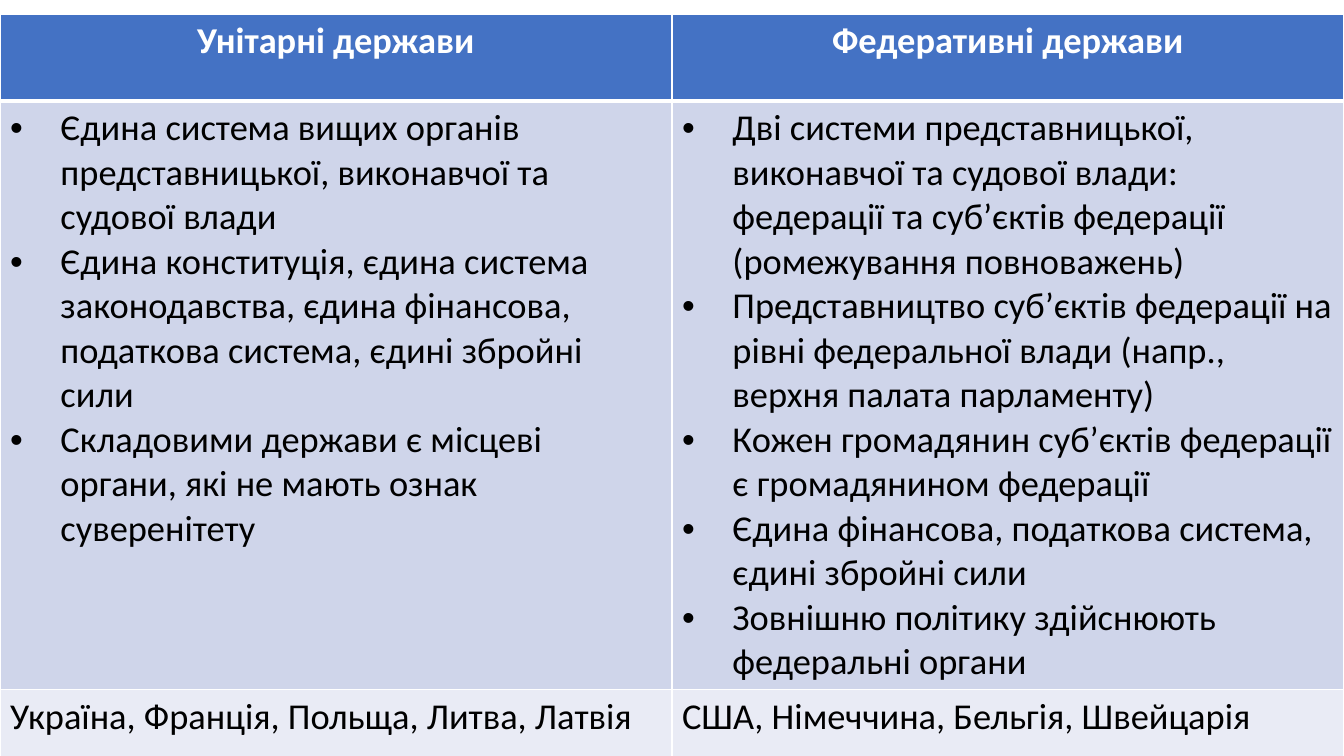
from lxml.etree import SubElement
from pptx import Presentation
from pptx.dml.color import RGBColor
from pptx.enum.text import PP_ALIGN
from pptx.oxml.ns import qn
from pptx.util import Inches, Pt

HEADINGS = ["Унітарні держави", "Федеративні держави"]
FEATURES = [
    [
        "Єдина система вищих органів представницької, виконавчої та судової влади",
        "Єдина конституція, єдина система законодавства, єдина фінансова, "
        "податкова система, єдині збройні сили",
        "Складовими держави є місцеві органи, які не мають ознак суверенітету",
    ],
    [
        "Дві системи представницької, виконавчої та судової влади: федерації "
        "та суб’єктів федерації (ромежування повноважень)",
        "Представництво суб’єктів федерації на рівні федеральної влади "
        "(напр., верхня палата парламенту)",
        "Кожен громадянин суб’єктів федерації є громадянином федерації",
        "Єдина фінансова, податкова система, єдині збройні сили",
        "Зовнішню політику здійснюють федеральні органи",
    ],
]
EXAMPLES = [
    "Україна, Франція, Польща, Литва, Латвія",
    "США, Німеччина, Бельгія, Швейцарія",
]

THEME = {
    "font": "Calibri",
    "size": Pt(26),
    "header": "4472C4",
    "features": "CFD5EA",
    "examples": "E9EBF5",
    "light": "FFFFFF",
    "dark": "000000",
    "line": Pt(1),
    "header_line": Pt(3),
}
SLIDE_W, SLIDE_H = Inches(13.33), Inches(7.5)
TABLE_TOP = Inches(0.14)
HEADER_H, FEATURES_H = Inches(0.86), Inches(5.83)
BULLET_INDENT = Inches(0.5)


def set_borders(cell, top, bottom):
    tcPr = cell._tc.get_or_add_tcPr()
    widths = {"L": THEME["line"], "R": THEME["line"], "T": top, "B": bottom}
    for i, (side, width) in enumerate(widths.items()):
        ln = SubElement(tcPr, qn(f"a:ln{side}"), w=str(width))
        fill = SubElement(ln, qn("a:solidFill"))
        SubElement(fill, qn("a:srgbClr"), val=THEME["light"])
        tcPr.insert(i, ln)  # borders must precede the cell fill


def add_bullet(p):
    pPr = p._p.get_or_add_pPr()
    pPr.set("marL", str(BULLET_INDENT))
    pPr.set("indent", str(-BULLET_INDENT))
    SubElement(pPr, qn("a:buFont"), typeface="Arial")
    SubElement(pPr, qn("a:buChar"), char="•")


def fill_cell(cell, lines, fill, header=False, bullets=False):
    cell.fill.solid()
    cell.fill.fore_color.rgb = RGBColor.from_string(THEME[fill])
    cell.text_frame.text = "\n".join(lines)
    for p in cell.text_frame.paragraphs:
        if header:
            p.alignment = PP_ALIGN.CENTER
        if bullets:
            add_bullet(p)
        font = p.runs[0].font
        font.name, font.size, font.bold = THEME["font"], THEME["size"], header
        font.color.rgb = RGBColor.from_string(THEME["light" if header else "dark"])


def main():
    prs = Presentation()
    prs.slide_width, prs.slide_height = SLIDE_W, SLIDE_H
    s = prs.slides.add_slide(prs.slide_layouts[6])

    table_h = SLIDE_H - TABLE_TOP
    table = s.shapes.add_table(
        3, len(HEADINGS), 0, TABLE_TOP, SLIDE_W, table_h).table
    heights = [HEADER_H, FEATURES_H, table_h - HEADER_H - FEATURES_H]
    for row, height in zip(table.rows, heights):
        row.height = height

    for col, (heading, features, examples) in enumerate(
            zip(HEADINGS, FEATURES, EXAMPLES)):
        fill_cell(table.cell(0, col), [heading], "header", header=True)
        fill_cell(table.cell(1, col), features, "features", bullets=True)
        fill_cell(table.cell(2, col), [examples], "examples")

        thin, thick = THEME["line"], THEME["header_line"]
        edges = [thin, thick, thin, thin]
        for row in range(3):
            set_borders(table.cell(row, col), edges[row], edges[row + 1])

    prs.save("out.pptx")


if __name__ == "__main__":
    main()
